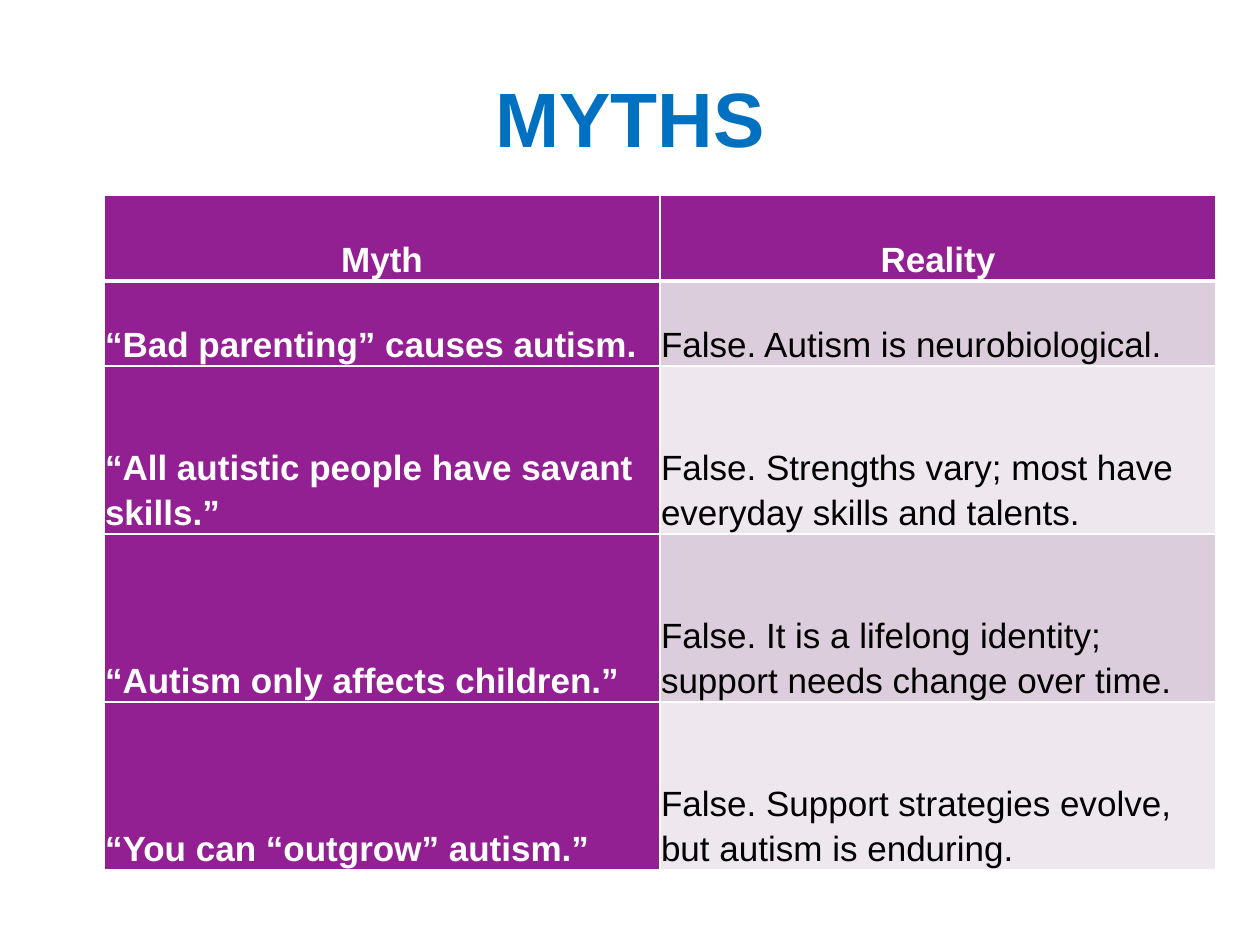
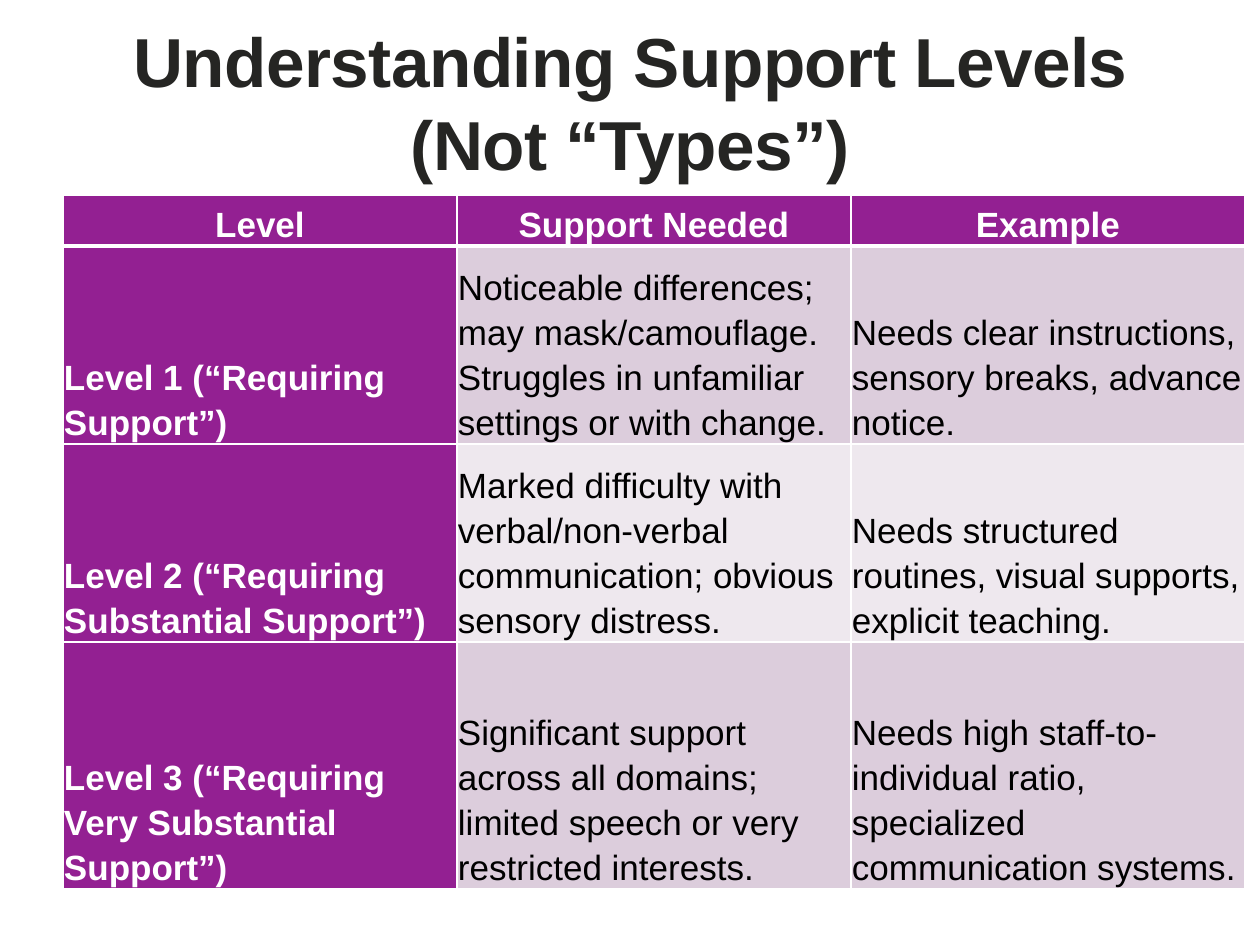
import pptx
import pptx.dml.color
import pptx.enum.text
import pptx.oxml.ns
import pptx.util
from lxml import etree

PX = 914400 / 126
FONT = "Arial"
WHITE = "FFFFFF"
BLACK = "000000"
BLUE = "0070C0"
CHARCOAL = "252523"
PURPLE = "932092"
BANDS = ("DCCDDC", "EEE8EE")
TITLE_LEFT, TITLE_WIDTH, TITLE_HEIGHT = 63, 1134, 158
TABLE_TOP = 195
TABLE_SIZE = 20
TITLE_ONLY_LAYOUT = 5

MYTHS = [
    ["Myth", "Reality"],
    ["“Bad parenting” causes autism.", "False. Autism is neurobiological."],
    ["“All autistic people have savant skills.”",
     "False. Strengths vary; most have everyday skills and talents."],
    ["“Autism only affects children.”",
     "False. It is a lifelong identity; support needs change over time."],
    ["“You can “outgrow” autism.”",
     "False. Support strategies evolve, but autism is enduring."],
]

LEVELS = [
    ["Level", "Support Needed", "Example"],
    ["Level 1 (“Requiring Support”)",
     "Noticeable differences; may mask/camouflage. Struggles in unfamiliar settings or with change.",
     "Needs clear instructions, sensory breaks, advance notice."],
    ["Level 2 (“Requiring Substantial Support”)",
     "Marked difficulty with verbal/non‑verbal communication; obvious sensory distress.",
     "Needs structured routines, visual supports, explicit teaching."],
    ["Level 3 (“Requiring Very Substantial Support”)",
     "Significant support across all domains; limited speech or very restricted interests.",
     "Needs high staff-to-individual ratio, specialized communication systems."],
]


def px(length):
    return pptx.util.Emu(round(length * PX))


def color(value):
    return pptx.dml.color.RGBColor.from_string(value)


class SlideBuilder:
    def __init__(self, deck):
        self.deck = deck
        self.slide = None

    def new_slide(self):
        layout = self.deck.slide_layouts[TITLE_ONLY_LAYOUT]
        self.slide = self.deck.slides.add_slide(layout)
        background = self.slide.background.fill
        background.solid()
        background.fore_color.rgb = color(WHITE)

    def format_text(self, para, size, ink, bold, centered, line_spacing):
        alignment = pptx.enum.text.PP_ALIGN
        para.alignment = alignment.CENTER if centered else alignment.LEFT
        para.line_spacing = line_spacing
        for span in para.runs:
            span.font.name = FONT
            span.font.size = pptx.util.Pt(size)
            span.font.bold = bold
            span.font.color.rgb = color(ink)

    def title(self, text, top, size, ink, tracking=0):
        box = self.slide.shapes.title
        box.left, box.top = px(TITLE_LEFT), px(top)
        box.width, box.height = px(TITLE_WIDTH), px(TITLE_HEIGHT)
        frame = box.text_frame
        frame.text = text
        frame.word_wrap = True
        frame.auto_size = pptx.enum.text.MSO_AUTO_SIZE.NONE
        frame.vertical_anchor = pptx.enum.text.MSO_ANCHOR.MIDDLE
        para = frame.paragraphs[0]
        self.format_text(para, size, ink, True, True, 1.0)
        if tracking:
            para.runs[0].font._element.set("spc", str(round(tracking * 100)))

    def border(self, cell, side, points):
        properties = cell._tc.get_or_add_tcPr()
        name = pptx.oxml.ns.qn
        line = etree.SubElement(properties, name(f"a:ln{side}"))
        line.set("w", str(pptx.util.Pt(points)))
        fill = etree.SubElement(line, name("a:solidFill"))
        etree.SubElement(fill, name("a:srgbClr")).set("val", WHITE)

    def cell(self, cell, text, row, column):
        header = row == 0
        strong = header or column == 0
        cell.text = text
        cell.margin_left = cell.margin_right = px(1)
        cell.margin_top = cell.margin_bottom = px(1)
        cell.vertical_anchor = pptx.enum.text.MSO_ANCHOR.BOTTOM
        self.format_text(cell.text_frame.paragraphs[0], TABLE_SIZE,
                         WHITE if strong else BLACK, strong, header, 1.15)
        widths = {"L": 1, "R": 1, "T": 3 if row == 1 else 1, "B": 3 if header else 1}
        for side, points in widths.items():
            self.border(cell, side, points)
        cell.fill.solid()
        cell.fill.fore_color.rgb = color(PURPLE if strong else BANDS[(row - 1) % 2])

    def table(self, left, column_width, row_heights, rows):
        column_count = len(rows[0])
        frame = self.slide.shapes.add_table(
            len(rows), column_count, px(left), px(TABLE_TOP),
            px(column_width * column_count), px(sum(row_heights)))
        table = frame.table
        for column in table.columns:
            column.width = px(column_width)
        for row, (height, texts) in enumerate(zip(row_heights, rows)):
            table.rows[row].height = px(height)
            for column, text in enumerate(texts):
                self.cell(table.cell(row, column), text, row, column)


def main():
    deck = pptx.Presentation()
    deck.slide_width = px(1260)
    deck.slide_height = px(945)
    builder = SlideBuilder(deck)

    builder.new_slide()
    builder.title("MYTHS", 38, 44, BLUE)
    builder.table(104, 556, [86, 85, 168, 168, 168], MYTHS)

    builder.new_slide()
    builder.title("Understanding Support Levels (Not “Types”)", 22, 39.6, CHARCOAL,
                  tracking=-0.3)
    builder.table(63, 394, [51, 198, 198, 247], LEVELS)

    deck.save("out.pptx")


if __name__ == "__main__":
    main()
